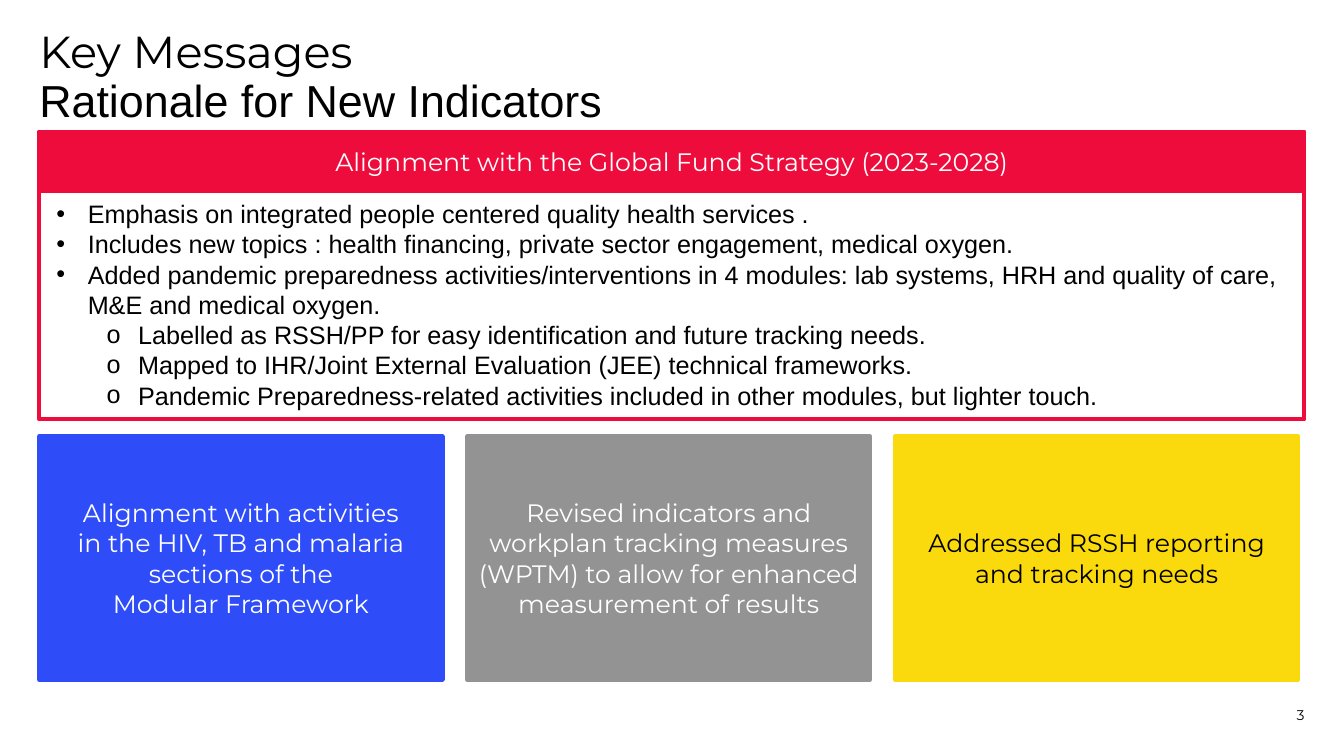
from dataclasses import dataclass
from typing import Optional

from lxml.etree import SubElement
from pptx import Presentation
from pptx.dml.color import RGBColor
from pptx.enum.shapes import MSO_SHAPE as Shape
from pptx.enum.text import MSO_ANCHOR as Anchor, PP_ALIGN as Align
from pptx.oxml.ns import qn
from pptx.util import Pt

COLORS = {
    "black": "000000",
    "white": "FFFFFF",
    "red": "EE0C3D",
    "blue": "2E4DF9",
    "gray": "939393",
    "yellow": "FAD90D",
}
HEAD_FONT, BODY_FONT = "Montserrat", "Arial"
LEFT, WIDTH = 28.1, 903.6
PANEL_TOP = 94.3
CARD_TOP, CARD_W, CARD_H, CARD_PITCH = 311.8, 288, 173.5, 305.65
HANG = 22.5


@dataclass
class Box:
    left: float
    top: float
    width: float
    height: float
    line: str
    fill: Optional[str] = None
    color: str = "white"
    lines: tuple[str, ...] = ()


@dataclass
class Bullet:
    text: str
    char: str = "•"
    level: int = 0


def rgb(name: str) -> RGBColor:
    return RGBColor.from_string(COLORS[name])


def add_run(p, text: str, size: float, font: str, color: str = "black") -> None:
    r = p.add_run()
    r.text = text
    for name, value in {"size": Pt(size), "name": font}.items():
        setattr(r.font, name, value)
    r.font.color.rgb = rgb(color)


def add_text_box(s, left: float, top: float, width: float, height: float,
                 inset: bool = False):
    tf = s.shapes.add_textbox(Pt(left), Pt(top), Pt(width), Pt(height)).text_frame
    tf.word_wrap = True
    if not inset:
        for side in ("left", "top", "right", "bottom"):
            setattr(tf, f"margin_{side}", 0)
    return tf


def next_paragraph(tf, index: int):
    return tf.add_paragraph() if index else tf.paragraphs[0]


def add_box(s, box: Box) -> None:
    sp = s.shapes.add_shape(Shape.RECTANGLE, Pt(box.left), Pt(box.top),
                            Pt(box.width), Pt(box.height))
    sp.shadow.inherit = False
    sp.line.color.rgb = rgb(box.line)
    sp.line.width = Pt(3)
    if box.fill:
        sp.fill.solid()
        sp.fill.fore_color.rgb = rgb(box.fill)
    else:
        sp.fill.background()
    tf = sp.text_frame
    tf.word_wrap = True
    tf.vertical_anchor = Anchor.MIDDLE
    for i, text in enumerate(box.lines):
        p = next_paragraph(tf, i)
        p.alignment = Align.CENTER
        add_run(p, text, 18, HEAD_FONT, box.color)


def add_bullet(p, bullet: Bullet) -> None:
    p.level = bullet.level
    pPr = p._p.get_or_add_pPr()
    pPr.set("marL", str(Pt(HANG + 36 * bullet.level)))
    pPr.set("indent", str(Pt(-HANG)))
    SubElement(pPr, qn("a:buFont")).set("typeface", BODY_FONT)
    SubElement(pPr, qn("a:buChar")).set("char", bullet.char)
    add_run(p, bullet.text, 18, BODY_FONT)


BULLETS = [
    Bullet("Emphasis on integrated people centered quality health services ."),
    Bullet("Includes new topics : health financing, private sector engagement, "
           "medical oxygen."),
    Bullet("Added pandemic preparedness activities/interventions in 4 modules: "
           "lab systems, HRH and quality of care, M&E and medical oxygen."),
    Bullet("Labelled as RSSH/PP for easy identification and future tracking needs.",
           "o", 1),
    Bullet("Mapped to IHR/Joint External Evaluation (JEE) technical frameworks.",
           "o", 1),
    Bullet("Pandemic Preparedness-related activities included in other modules, "
           "but lighter touch.", "o", 1),
]
CARDS = [
    ("blue", "white", ("Alignment with activities",
                       "in the HIV, TB and malaria sections of the",
                       "Modular Framework")),
    ("gray", "white", ("Revised indicators and workplan tracking measures (WPTM) "
                       "to allow for enhanced measurement of results",)),
    ("yellow", "black", ("Addressed RSSH reporting and tracking needs",)),
]


def main() -> None:
    prs = Presentation()
    prs.slide_width, prs.slide_height = Pt(960), Pt(540)
    s = prs.slides.add_slide(prs.slide_layouts[6])

    # Title
    p = add_text_box(s, LEFT, 21.6, WIDTH, 74.2).paragraphs[0]
    p.line_spacing = 0.9
    add_run(p, "Key Messages", 32, HEAD_FONT)
    p.add_line_break()
    add_run(p, "Rationale for New Indicators", 32, BODY_FONT)

    # Strategy panel with its header
    add_box(s, Box(LEFT, PANEL_TOP, WIDTH, 205.2, "red"))
    add_box(s, Box(LEFT, PANEL_TOP, WIDTH, 41.8, "red", "red",
                   lines=("Alignment with the Global Fund Strategy (2023-2028)",)))
    tf = add_text_box(s, 33.1, 138.2, 894.2, 159.8, inset=True)
    for i, bullet in enumerate(BULLETS):
        add_bullet(next_paragraph(tf, i), bullet)

    # Three cards
    for i, (fill, color, lines) in enumerate(CARDS):
        add_box(s, Box(LEFT + i * CARD_PITCH, CARD_TOP, CARD_W, CARD_H,
                       fill, fill, color, lines))

    # Slide number
    tf = add_text_box(s, 861.1, 488.2, 70.6, 28.8)
    tf.vertical_anchor = Anchor.BOTTOM
    tf.paragraphs[0].alignment = Align.RIGHT
    add_run(tf.paragraphs[0], "3", 10, HEAD_FONT)

    prs.save("out.pptx")


if __name__ == "__main__":
    main()
